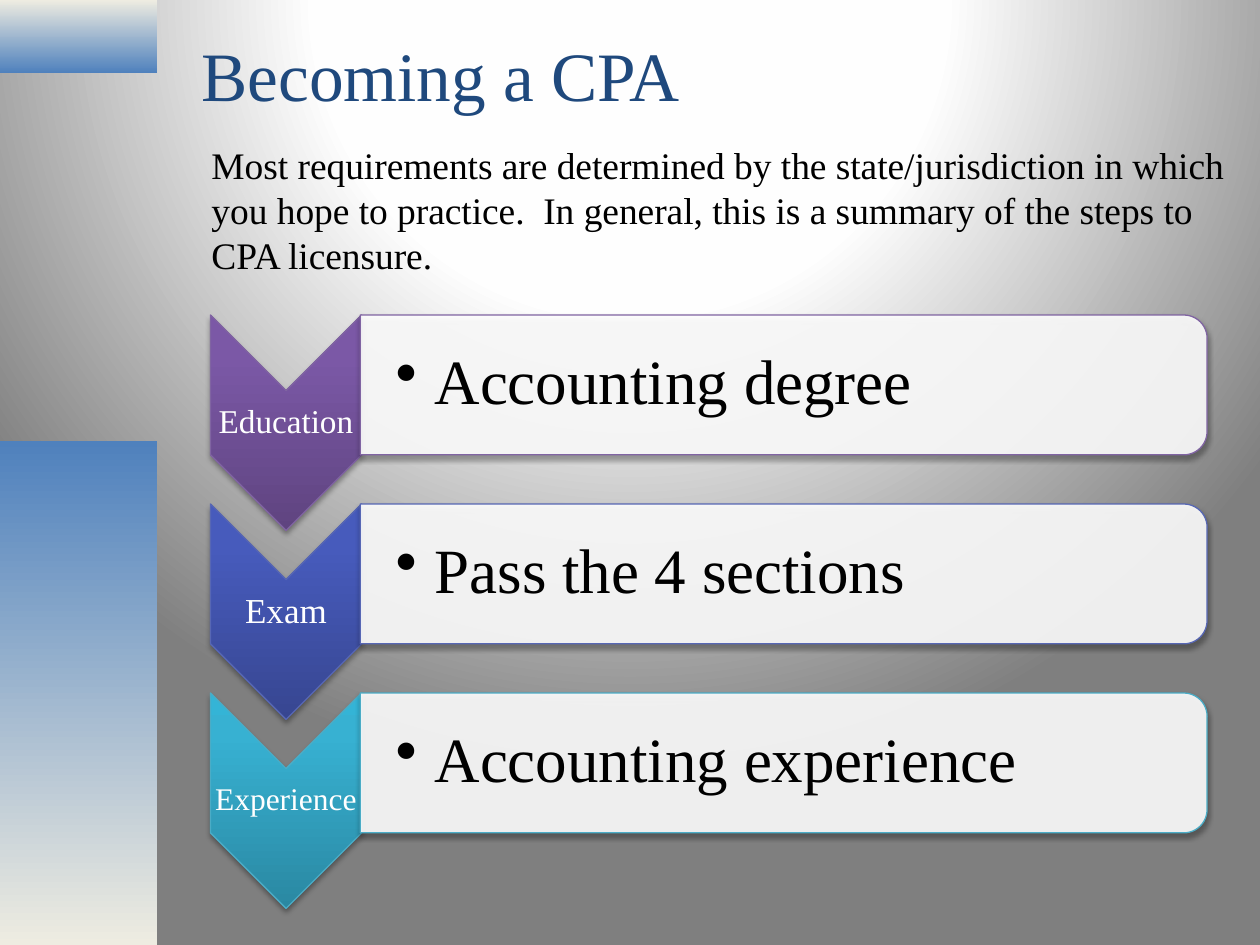
from dataclasses import dataclass

from pptx import Presentation
from pptx.dml.color import RGBColor
from pptx.enum.shapes import MSO_SHAPE
from pptx.enum.text import MSO_ANCHOR, PP_ALIGN
from pptx.oxml import parse_xml
from pptx.oxml.ns import nsdecls, qn
from pptx.util import Inches, Pt


@dataclass(frozen=True)
class Theme:
    font: str = "Times New Roman"
    title: str = "1F497D"
    text: str = "000000"
    white: str = "FFFFFF"
    blue: str = "4F81BD"
    cream: str = "EEECE1"
    backdrop: tuple = ((0, "FFFFFF"), (40, "FEFEFE"), (100, "7F7F7F"))
    title_size: float = 39.6
    intro_size: float = 21.4
    point_size: float = 36


THEME = Theme()
FIRST_ROW, ROW_PITCH = 2.5, 1.5
CHEVRON_LEFT, CHEVRON_W, CHEVRON_H = 1.67, 1.2, 1.71
PANEL_LEFT, PANEL_W, PANEL_H = 2.86, 6.72, 1.11
BAR_W = 1.25
SPREAD = ('<a:path path="circle"><a:fillToRect l="50000" t="-80000" '
          'r="50000" b="180000"/></a:path>')
INTRO = ("Most requirements are determined by the state/jurisdiction in which "
         "you hope to practice.  In general, this is a summary of the steps to "
         "CPA licensure.")
# label, label size, point, line colour, gradient from the tip upwards
STEPS = [
    ("Education", 19, "Accounting degree", "8064A2",
     ((0, "5F4480"), (80, "7B58A6"), (100, "7C57A8"))),
    ("Exam", 20, "Pass the 4 sections", "5767B4",
     ((0, "374691"), (80, "475BBC"), (100, "455ABF"))),
    ("Experience", 18, "Accounting experience", "4BACC6",
     ((0, "2A88A2"), (80, "37B1D2"), (100, "34B4D6"))),
]


def linear(angle):
    return f'<a:lin ang="{angle * 60000}" scaled="0"/>'


def set_gradient(owner, fill, stops, direction):
    """Give the fill of owner any number of stops, fixed to the page."""
    fill.gradient()
    old = owner._element.find(".//" + qn("a:gradFill"))
    gs = "".join(f'<a:gs pos="{pos * 1000}"><a:srgbClr val="{color}"/></a:gs>'
                 for pos, color in stops)
    new = parse_xml(f'<a:gradFill {nsdecls("a")} rotWithShape="0">'
                    f'<a:gsLst>{gs}</a:gsLst>{direction}</a:gradFill>')
    old.getparent().replace(old, new)


def add_bar(slide, top, height, stops):
    sp = slide.shapes.add_shape(MSO_SHAPE.RECTANGLE, 0, Inches(top),
                                Inches(BAR_W), Inches(height))
    sp.shadow.inherit = False
    sp.line.fill.background()
    set_gradient(sp, sp.fill, stops, linear(90))


def add_turned_shape(slide, kind, left, top, width, height, line_color):
    """Add a shape turned by 90 degrees that covers the given box."""
    shift = (width - height) / 2
    sp = slide.shapes.add_shape(kind, Inches(left + shift), Inches(top - shift),
                                Inches(height), Inches(width))
    sp.rotation = 90
    sp.line.color.rgb = RGBColor.from_string(line_color)
    sp.line.width = Pt(0.75)
    sp.shadow.inherit = False
    sp._element.spPr.find(qn("a:effectLst")).append(parse_xml(
        f'<a:outerShdw {nsdecls("a")} blurRad="{Pt(3.1)}" dist="{Pt(1.8)}" '
        'dir="5400000" rotWithShape="0"><a:srgbClr val="000000">'
        '<a:alpha val="35000"/></a:srgbClr></a:outerShdw>'))
    return sp


def write(sp, text, size, color, **paragraph):
    tf = sp.text_frame
    tf.word_wrap = True
    tf.vertical_anchor = MSO_ANCHOR.MIDDLE
    p = tf.paragraphs[0]
    for name, value in paragraph.items():
        setattr(p, name, value)
    r = p.add_run()
    r.text = text
    style = {"name": THEME.font, "size": Pt(size)}
    for name, value in style.items():
        setattr(r.font, name, value)
    r.font.color.rgb = RGBColor.from_string(color)
    return p


def add_text(slide, box, text, size, color, margins=None, **paragraph):
    sp = slide.shapes.add_textbox(*map(Inches, box))
    sides = ("margin_left", "margin_top", "margin_right", "margin_bottom")
    for side, value in zip(sides, margins or ()):
        setattr(sp.text_frame, side, Inches(value))
    return write(sp, text, size, color, **paragraph)


def add_bullet(p, indent):
    pPr = p._p.get_or_add_pPr()
    pPr.set("marL", str(Inches(indent)))
    pPr.set("indent", str(-Inches(indent)))
    pPr.append(parse_xml(f'<a:buChar {nsdecls("a")} char="•"/>'))


def add_step(slide, top, label, label_size, point, line_color, stops):
    chevron = add_turned_shape(slide, MSO_SHAPE.CHEVRON, CHEVRON_LEFT, top,
                               CHEVRON_W, CHEVRON_H, line_color)
    set_gradient(chevron, chevron.fill, stops, linear(270))
    add_text(slide, (CHEVRON_LEFT, top + 0.6, CHEVRON_W, 0.51), label,
             label_size, THEME.white, [0.01] * 4,
             alignment=PP_ALIGN.CENTER, line_spacing=0.9)

    panel = add_turned_shape(slide, MSO_SHAPE.ROUND_2_SAME_RECTANGLE,
                             PANEL_LEFT, top, PANEL_W, PANEL_H, line_color)
    panel.fill.solid()
    panel.fill.fore_color.rgb = RGBColor.from_string(THEME.white)
    panel._element.spPr.find(qn("a:solidFill"))[0].append(
        parse_xml(f'<a:alpha {nsdecls("a")} val="90000"/>'))
    p = add_text(slide, (PANEL_LEFT, top + 0.05, PANEL_W - 0.05, 1), point,
                 THEME.point_size, THEME.text, [0.28, 0.03, 0.03, 0.03],
                 line_spacing=0.9, level=1)
    add_bullet(p, 0.31)


def add_title(slide, text):
    title = slide.shapes.title
    box = {"left": 1.5, "top": 0.25, "width": 8.08, "height": 0.67}
    for name, value in box.items():
        setattr(title, name, Inches(value))
    write(title, text, THEME.title_size, THEME.title, alignment=PP_ALIGN.LEFT)


def main():
    prs = Presentation()
    prs.slide_width, prs.slide_height = Inches(10), Inches(7.5)
    slide = prs.slides.add_slide(prs.slide_layouts[5])
    set_gradient(slide, slide.background.fill, THEME.backdrop, SPREAD)
    add_bar(slide, 0, 0.58, ((0, THEME.cream), (100, THEME.blue)))
    add_bar(slide, 3.5, 4, ((0, THEME.blue), (100, THEME.cream)))
    add_title(slide, "Becoming a CPA")
    for row, step in enumerate(STEPS):
        add_step(slide, FIRST_ROW + row * ROW_PITCH, *step)
    add_text(slide, (1.58, 1.08, 8.42, 1.17), INTRO,
             THEME.intro_size, THEME.text)
    prs.save("out.pptx")


if __name__ == "__main__":
    main()
